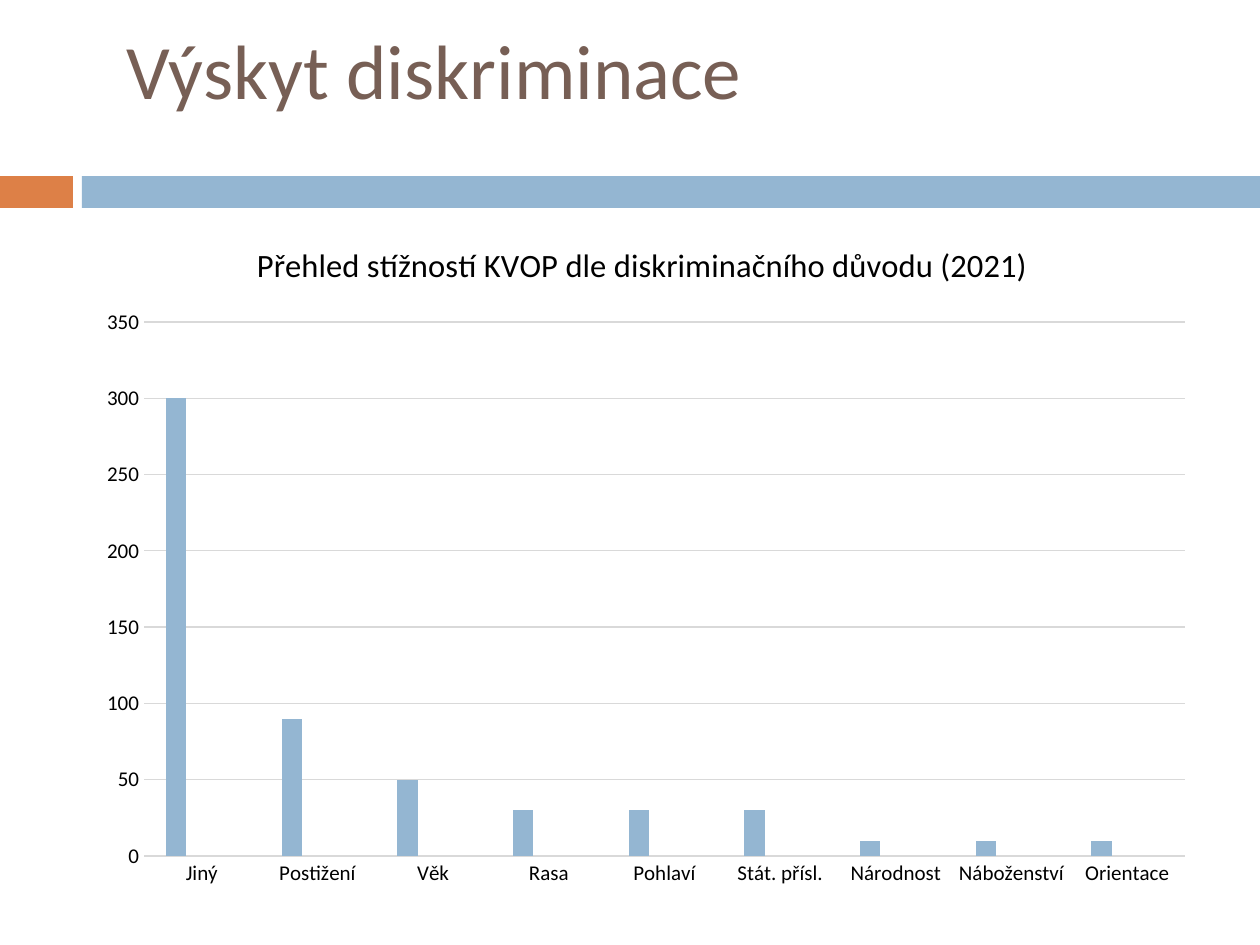
import dataclasses

import pptx
import pptx.chart.data
import pptx.dml.color
import pptx.enum.chart
import pptx.enum.shapes
import pptx.enum.text
import pptx.oxml
import pptx.oxml.ns
import pptx.util

PIXELS_PER_INCH = 126
TITLE_ONLY_LAYOUT = 5
CHART_BOX = (84, 214, 1124, 684)
PLOT_BOX = (144, 322, 1041, 534)
CHART_TITLE_CORNER = (251, 236)

COMPLAINTS = {
    "Jiný": 300,
    "Postižení": 90,
    "Věk": 50,
    "Rasa": 30,
    "Pohlaví": 30,
    "Stát. přísl.": 30,
    "Národnost": 10,
    "Náboženství": 10,
    "Orientace": 10,
}


@dataclasses.dataclass(frozen=True)
class Theme:
    font: str = "Calibri"
    heading: str = "775F55"
    text: str = "000000"
    grid: str = "D9D9D9"
    orange: str = "DD8047"
    blue: str = "94B6D2"
    green: str = "A5AB81"
    heading_size: int = 44
    chart_title_size: float = 18.6
    chart_size: int = 10
    axis_size: int = 12
    line_width: float = 0.75


THEME = Theme()


def px(length):
    return pptx.util.Emu(round(length * 914400 / PIXELS_PER_INCH))


def rgb(color):
    return pptx.dml.color.RGBColor.from_string(color)


def style_font(font, size, color):
    font.name = THEME.font
    font.size = pptx.util.Pt(size)
    font.bold = False
    font.color.rgb = rgb(color)


def style_line(line):
    line.color.rgb = rgb(THEME.grid)
    line.width = pptx.util.Pt(THEME.line_width)


def add_band(slide, left, width, color):
    shape = slide.shapes.add_shape(
        pptx.enum.shapes.MSO_SHAPE.RECTANGLE, px(left), px(176), px(width), px(32)
    )
    shape.shadow.inherit = False
    shape.fill.solid()
    shape.fill.fore_color.rgb = rgb(color)
    shape.line.fill.background()


def set_title(slide, text):
    title = slide.shapes.title
    title.left, title.top, title.width, title.height = map(px, (114, 0, 1124, 137))
    frame = title.text_frame
    frame.word_wrap = True
    frame.vertical_anchor = pptx.enum.text.MSO_ANCHOR.MIDDLE
    paragraph = frame.paragraphs[0]
    paragraph.alignment = pptx.enum.text.PP_ALIGN.LEFT
    run = paragraph.add_run()
    run.text = text
    style_font(run.font, THEME.heading_size, THEME.heading)


def manual_layout(left, top, width=None, height=None):
    """Return a c:layout element for a slide position inside the chart."""
    chart_left, chart_top, chart_width, chart_height = CHART_BOX
    tags = [("xMode", "edge"), ("yMode", "edge")]
    if width:
        tags.insert(0, ("layoutTarget", "inner"))
    tags += [
        ("x", round((left - chart_left) / chart_width, 4)),
        ("y", round((top - chart_top) / chart_height, 4)),
    ]
    if width:
        tags += [
            ("w", round(width / chart_width, 4)),
            ("h", round(height / chart_height, 4)),
        ]
    children = "".join(f'<c:{tag} val="{value}"/>' for tag, value in tags)
    return pptx.oxml.parse_xml(
        f'<c:layout {pptx.oxml.ns.nsdecls("c")}>'
        f"<c:manualLayout>{children}</c:manualLayout></c:layout>"
    )


def place(element, layout, index):
    """Put the layout into a chart element, replacing any automatic one."""
    for old in element.findall(pptx.oxml.ns.qn("c:layout")):
        element.remove(old)
    element.insert(index, layout)


def set_chart_title(chart, text):
    chart.has_title = True
    title = chart.chart_title
    run = title.text_frame.paragraphs[0].add_run()
    run.text = text
    style_font(run.font, THEME.chart_title_size, THEME.text)
    title.include_in_layout = False
    place(title._element, manual_layout(*CHART_TITLE_CORNER), 1)


def style_axes(chart):
    for axis in (chart.category_axis, chart.value_axis):
        axis.major_tick_mark = pptx.enum.chart.XL_TICK_MARK.NONE
        axis.minor_tick_mark = pptx.enum.chart.XL_TICK_MARK.NONE
        style_font(axis.tick_labels.font, THEME.axis_size, THEME.text)
    style_line(chart.category_axis.format.line)
    value_axis = chart.value_axis
    value_axis.minimum_scale = 0
    value_axis.maximum_scale = 350
    value_axis.major_unit = 50
    value_axis.format.line.fill.background()
    style_line(value_axis.major_gridlines.format.line)


def add_complaints_chart(slide):
    data = pptx.chart.data.CategoryChartData()
    data.categories = list(COMPLAINTS)
    data.add_series("Series 1", list(COMPLAINTS.values()))
    for name in ("Series 2", "Series 3"):
        data.add_series(name, [None] * len(COMPLAINTS))
    chart = slide.shapes.add_chart(
        pptx.enum.chart.XL_CHART_TYPE.COLUMN_CLUSTERED, *map(px, CHART_BOX), data
    ).chart
    chart.has_legend = False
    style_font(chart.font, THEME.chart_size, THEME.text)
    set_chart_title(chart, "Přehled stížností KVOP dle diskriminačního důvodu (2021)")
    style_axes(chart)

    plot = chart.plots[0]
    plot.gap_width = 219
    plot.overlap = -27
    plot.vary_by_categories = False
    for series, color in zip(plot.series, (THEME.blue, THEME.orange, THEME.green)):
        series.format.fill.solid()
        series.format.fill.fore_color.rgb = rgb(color)
    plot_area = chart._chartSpace.chart.plotArea
    place(plot_area, manual_layout(*PLOT_BOX), 0)


def main():
    presentation = pptx.Presentation()
    presentation.slide_width = px(1260)
    presentation.slide_height = px(945)
    slide = presentation.slides.add_slide(
        presentation.slide_layouts[TITLE_ONLY_LAYOUT]
    )
    add_band(slide, 0, 73, THEME.orange)
    add_band(slide, 82, 1178, THEME.blue)
    set_title(slide, "Výskyt diskriminace")
    add_complaints_chart(slide)
    presentation.save("out.pptx")


if __name__ == "__main__":
    main()
